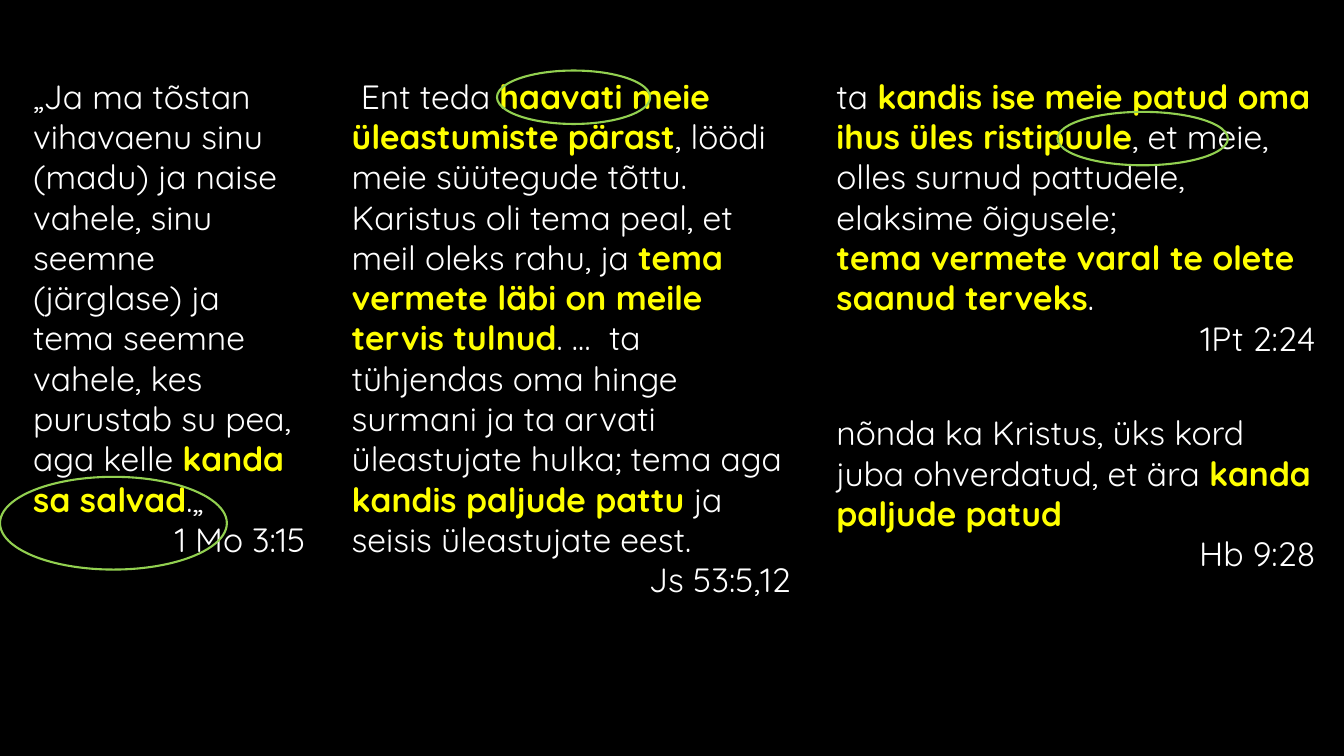
from dataclasses import dataclass

from pptx import Presentation
from pptx.dml.color import RGBColor as Rgb
from pptx.enum.shapes import MSO_SHAPE as Kind
from pptx.enum.text import MSO_AUTO_SIZE as Fit, PP_ALIGN as Align
from pptx.slide import Slide
from pptx.text.text import _Paragraph as Para
from pptx.util import Inches, Pt

WIDE, HIGH = Inches(13.33), Inches(7.5)
TOP = 9.33
COLORS = {"back": "000000", "plain": "FFFFFF", "strong": "FFFF00", "ring": "92D050"}


@dataclass(frozen=True)
class Box:
    left: float
    top: float
    width: float
    height: float

    def place(self) -> tuple[int, int, int, int]:
        return (
            int(WIDE * self.left / 100),
            int(HIGH * self.top / 100),
            int(WIDE * self.width / 100),
            int(HIGH * self.height / 100),
        )


@dataclass(frozen=True)
class Verse:
    box: Box
    text: str
    source: str


VERSES = [
    Verse(
        Box(25.43, TOP, 34.13, 71.33),
        " Ent teda *haavati meie üleastumiste pärast*, löödi meie süütegude tõttu. "
        "Karistus oli tema peal, et meil oleks rahu, ja *tema vermete läbi on meile "
        "tervis tulnud*. …  ta tühjendas oma hinge surmani ja ta arvati üleastujate "
        "hulka; tema aga *kandis paljude pattu *ja seisis üleastujate eest.",
        "Js 53:5,12",
    ),
    Verse(
        Box(61.5, 53.87, 37.13, 22.93),
        "nõnda ka Kristus, üks kord juba ohverdatud, et ära *kanda paljude patud*",
        "Hb 9:28",
    ),
    Verse(
        Box(61.5, TOP, 37.13, 39.07),
        "ta *kandis ise meie patud oma ihus üles ristipuule*, et meie, olles surnud "
        "pattudele, elaksime õigusele; \n*tema vermete varal te olete saanud terveks*.",
        "1Pt 2:24",
    ),
    Verse(
        Box(1.73, TOP, 21.75, 71.33),
        "„Ja ma tõstan vihavaenu sinu (madu) ja naise vahele, sinu seemne (järglase) "
        "ja tema seemne vahele, kes purustab su pea, aga kelle *kanda sa salvad*.„",
        "1 Mo 3:15",
    ),
]

RINGS = [
    Box(36.98, TOP, 11.4, 7.07),
    Box(0, 63.07, 16.88, 12.27),
    Box(78.68, 14.8, 12.68, 7.07),
]


def tint(name: str) -> Rgb:
    return Rgb.from_string(COLORS[name])


def style(para: Para) -> None:
    para.font.name = "Quicksand"
    para.font.size = Pt(24)
    para.font.color.rgb = tint("plain")


def fill(para: Para, text: str) -> None:
    style(para)
    for turn, part in enumerate(text.split("*")):
        for row, line in enumerate(part.split("\n")):
            if row:
                para.add_line_break()
            if line:
                run = para.add_run()
                run.text = line
                if turn % 2:
                    run.font.bold = True
                    run.font.color.rgb = tint("strong")


def write(slide: Slide, verse: Verse) -> None:
    frame = slide.shapes.add_textbox(*verse.box.place()).text_frame
    frame.word_wrap = True
    frame.auto_size = Fit.SHAPE_TO_FIT_TEXT
    fill(frame.paragraphs[0], verse.text)
    source = frame.add_paragraph()
    source.alignment = Align.RIGHT
    fill(source, verse.source)


def circle(slide: Slide, box: Box) -> None:
    ring = slide.shapes.add_shape(Kind.OVAL, *box.place())
    ring.shadow.inherit = False
    ring.fill.background()
    ring.line.color.rgb = tint("ring")
    ring.line.width = Pt(1.5)


def main() -> None:
    deck = Presentation()
    deck.slide_width, deck.slide_height = WIDE, HIGH
    slide = deck.slides.add_slide(deck.slide_layouts[6])
    back = slide.background.fill
    back.solid()
    back.fore_color.rgb = tint("back")
    for verse in VERSES:
        write(slide, verse)
    for ring in RINGS:
        circle(slide, ring)
    deck.save("out.pptx")


if __name__ == "__main__":
    main()
